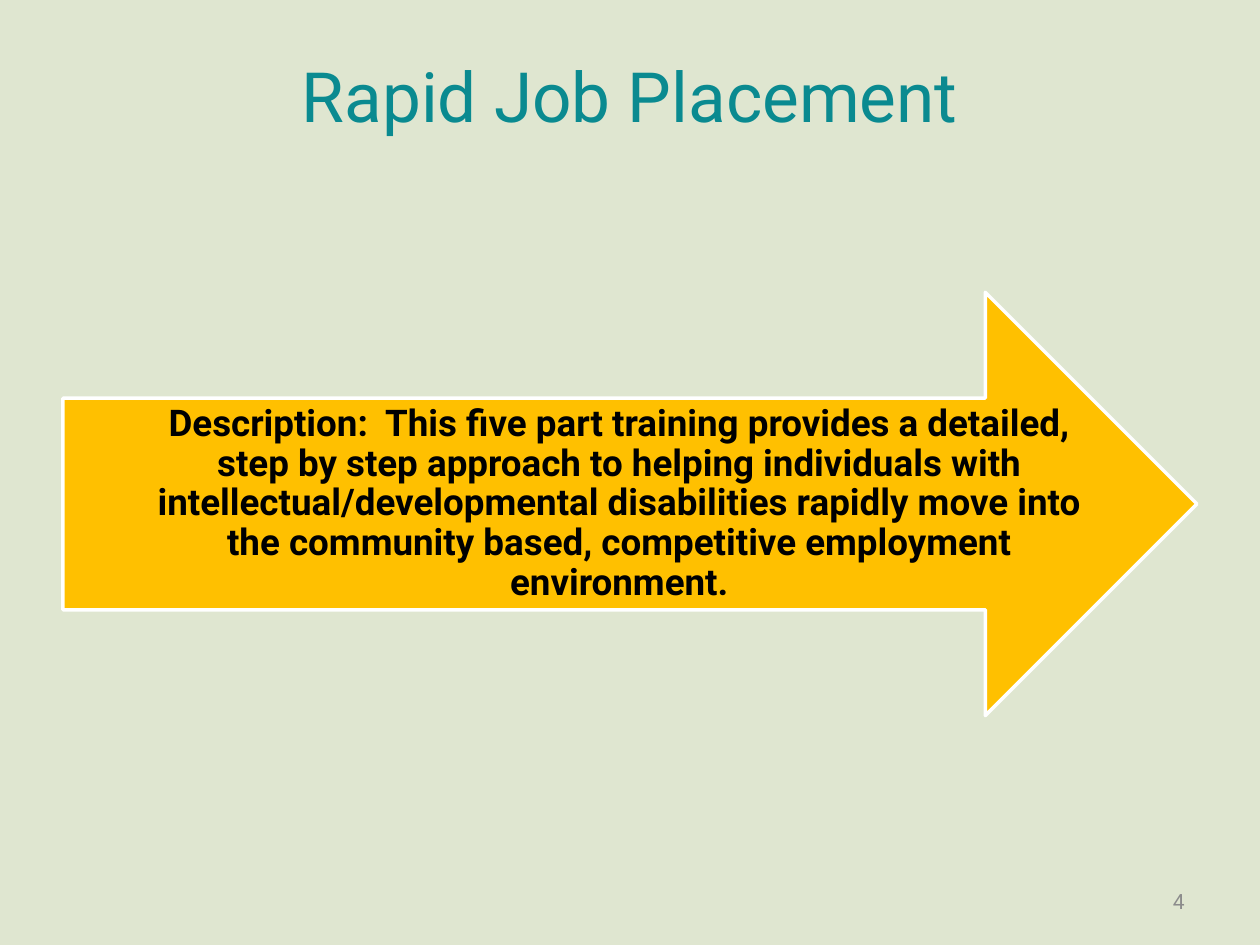
from dataclasses import dataclass

from pptx import Presentation
from pptx.dml.color import RGBColor
from pptx.enum.shapes import MSO_SHAPE as Shape
from pptx.enum.text import MSO_ANCHOR as Anchor, PP_ALIGN as Align
from pptx.util import Inches, Pt


@dataclass(frozen=True)
class Theme:
    font: str = "Roboto"
    background: str = "DFE6D0"
    title: str = "0A8A90"
    arrow: str = "FFC000"
    outline: str = "FFFFFF"
    body: str = "000000"
    muted: str = "8C8C8C"
    title_size: float = 39.6
    body_size: float = 21
    number_size: float = 12


@dataclass(frozen=True)
class Area:
    left: float
    top: float
    width: float
    height: float

    def lengths(self) -> tuple:
        return tuple(map(Inches, (self.left, self.top, self.width, self.height)))


THEME = Theme()
TITLE_AREA = Area(0.5, 0.42, 9, 1.25)
ARROW_AREA = Area(0.5, 2.32, 9, 3.36)
DESCRIPTION_AREA = Area(1.23, 3.16, 7.37, 1.68)
NUMBER_AREA = Area(7.17, 6.95, 2.33, 0.4)
DESCRIPTION = (
    "Description:  This five part training provides a detailed, "
    "step by step approach to helping individuals with "
    "intellectual/developmental disabilities rapidly move into "
    "the community based, competitive employment environment."
)


def rgb(value: str) -> RGBColor:
    return RGBColor.from_string(value)


def write(box, text: str, *, size: float, color: str, align=Align.CENTER,
          anchor=Anchor.MIDDLE, bold: bool = False, line_spacing: float = 1.0,
          side_inset: float = 0.1, end_inset: float = 0.05) -> None:
    frame = box.text_frame
    frame.word_wrap = True
    frame.vertical_anchor = anchor
    frame.margin_left = frame.margin_right = Inches(side_inset)
    frame.margin_top = frame.margin_bottom = Inches(end_inset)
    para = frame.paragraphs[0]
    para.alignment = align
    para.line_spacing = line_spacing
    span = para.add_run()
    span.text = text
    span.font.name = THEME.font
    span.font.size = Pt(size)
    span.font.bold = bold
    span.font.color.rgb = rgb(color)


def add_title(page, text: str) -> None:
    title = page.shapes.title
    title.left, title.top, title.width, title.height = TITLE_AREA.lengths()
    write(title, text, size=THEME.title_size, color=THEME.title,
          anchor=Anchor.TOP, end_inset=0)


def add_arrow(page) -> None:
    arrow = page.shapes.add_shape(Shape.RIGHT_ARROW, *ARROW_AREA.lengths())
    arrow.shadow.inherit = False
    arrow.fill.solid()
    arrow.fill.fore_color.rgb = rgb(THEME.arrow)
    arrow.line.color.rgb = rgb(THEME.outline)
    arrow.line.width = Pt(2)


def add_text(page, area: Area, text: str, **text_format) -> None:
    write(page.shapes.add_textbox(*area.lengths()), text, **text_format)


def main() -> None:
    deck = Presentation()
    deck.slide_width, deck.slide_height = Inches(10), Inches(7.5)
    page = deck.slides.add_slide(deck.slide_layouts[5])
    page.background.fill.solid()
    page.background.fill.fore_color.rgb = rgb(THEME.background)

    add_title(page, "Rapid Job Placement")
    add_arrow(page)
    add_text(page, DESCRIPTION_AREA, DESCRIPTION, size=THEME.body_size,
             color=THEME.body, bold=True, line_spacing=0.9,
             side_inset=0, end_inset=0)
    add_text(page, NUMBER_AREA, "4", size=THEME.number_size,
             color=THEME.muted, align=Align.RIGHT)
    deck.save("out.pptx")


if __name__ == "__main__":
    main()
